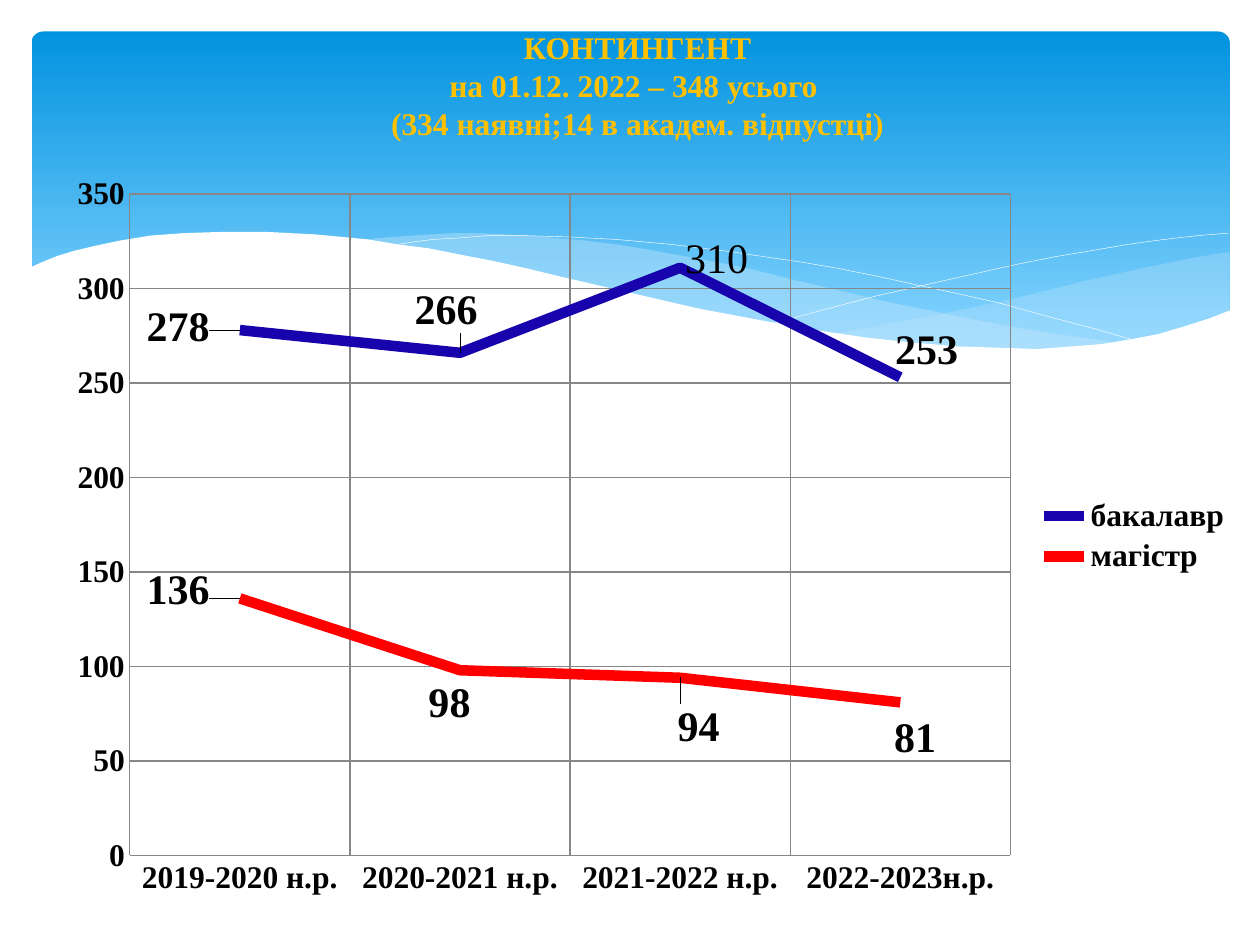
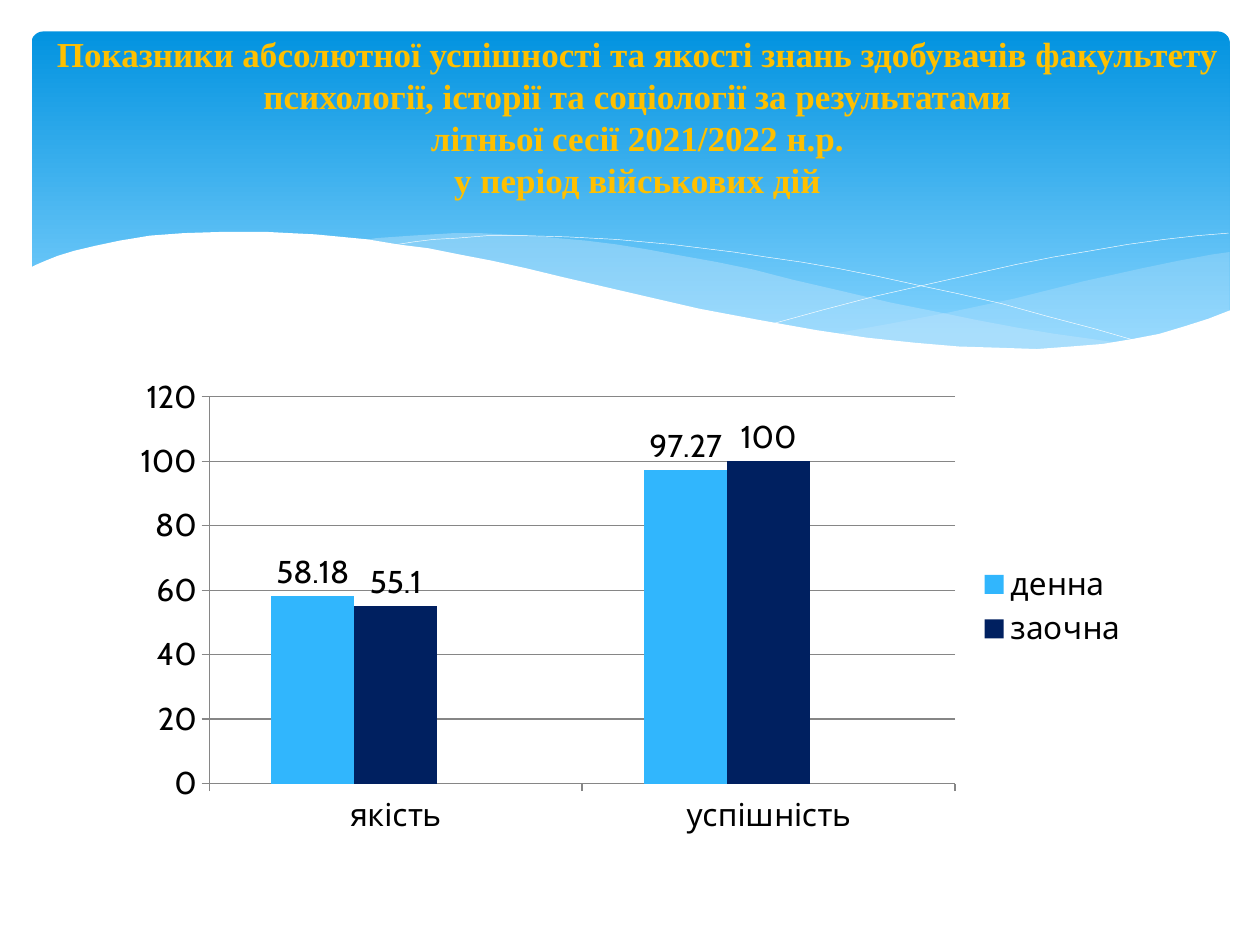
from pptx import Presentation
from pptx.chart.data import CategoryChartData
from pptx.dml.color import RGBColor
from pptx.enum.chart import XL_CHART_TYPE, XL_LABEL_POSITION, XL_LEGEND_POSITION, XL_MARKER_STYLE, XL_TICK_MARK
from pptx.enum.shapes import MSO_SHAPE
from pptx.enum.text import MSO_ANCHOR, MSO_AUTO_SIZE, PP_ALIGN
from pptx.oxml import parse_xml
from pptx.oxml.ns import nsdecls
from pptx.util import Inches, Pt

LINE, COLUMN = XL_CHART_TYPE.LINE, XL_CHART_TYPE.COLUMN_CLUSTERED
LABEL_RIGHT, LABEL_ABOVE = XL_LABEL_POSITION.RIGHT, XL_LABEL_POSITION.OUTSIDE_END
LEGEND_RIGHT = XL_LEGEND_POSITION.RIGHT
NO_MARKER = XL_MARKER_STYLE.NONE
TICK_NONE, TICK_OUT = XL_TICK_MARK.NONE, XL_TICK_MARK.OUTSIDE
ROUNDED = MSO_SHAPE.ROUNDED_RECTANGLE
MIDDLE, CENTER, NO_FIT = MSO_ANCHOR.MIDDLE, PP_ALIGN.CENTER, MSO_AUTO_SIZE.NONE

COLORS = {
    "sky_top": "0293E0", "sky_bottom": "83D3FE", "wave": "C6E7FC", "paper": "FFFFFF",
    "title": "FFC000", "text": "000000", "grid": "868686",
    "bachelor": "1804AC", "master": "FF0000",
    "full_time": "31B6FD", "part_time": "002060", "unused": "5BD078",
}
SERIF, SANS = "Times New Roman", "Cabin"

RIGHT_WAVE = [
    (9.76, 2), (9.62, 2.02), (9.35, 2.07), (9.06, 2.13), (8.61, 2.23), (8.05, 2.37),
    (7.53, 2.48), (7.06, 2.57), (6.61, 2.65), (6.91, 2.69), (7.19, 2.72), (7.45, 2.75),
    (7.69, 2.77), (8.03, 2.78), (8.35, 2.77), (8.63, 2.75), (8.89, 2.72), (9.13, 2.67),
    (9.35, 2.62), (9.49, 2.57), (9.63, 2.52), (9.76, 2.47),
]
LONG_WAVE = [
    (8.93, 2.73), (8.66, 2.69), (8.37, 2.65), (8.07, 2.6), (7.75, 2.54), (7.41, 2.47),
    (7.06, 2.4), (6.68, 2.31), (6.29, 2.22), (5.98, 2.14), (5.69, 2.08), (5.41, 2.03),
    (5.14, 1.98), (4.89, 1.94), (4.65, 1.91), (4.42, 1.89), (4.2, 1.87), (3.99, 1.86),
    (3.8, 1.85), (3.61, 1.85), (3.28, 1.87), (2.99, 1.89), (2.86, 1.91), (3.23, 1.96),
    (3.62, 2.03), (4.04, 2.11), (4.49, 2.22), (4.91, 2.32), (5.3, 2.4), (5.66, 2.48),
    (6.01, 2.55), (6.34, 2.61), (6.65, 2.66), (6.95, 2.7), (7.22, 2.74), (7.48, 2.76),
    (7.73, 2.77), (7.96, 2.78), (8.28, 2.78), (8.57, 2.77), (8.76, 2.75),
]
FALLING_CURVE = [
    (3.09, 1.95), (3.28, 1.92), (3.44, 1.9), (3.63, 1.89), (3.87, 1.87), (4.16, 1.87),
    (4.5, 1.88), (4.89, 1.9), (5.33, 1.94), (5.82, 2), (6.08, 2.04), (6.36, 2.08),
    (6.65, 2.13), (6.95, 2.19), (7.27, 2.26), (7.6, 2.33), (7.95, 2.41), (8.31, 2.51),
    (8.69, 2.61), (9.07, 2.72),
]
RISING_CURVE = [
    (6.13, 2.57), (6.53, 2.46), (6.95, 2.35), (7.48, 2.23), (8.06, 2.1), (8.36, 2.04),
    (8.66, 1.99), (8.95, 1.94), (9.24, 1.9), (9.51, 1.87), (9.75, 1.85),
]
PAPER_EDGE = [
    (9.77, 2.46), (9.59, 2.53), (9.4, 2.59), (9.2, 2.65), (8.99, 2.69), (8.75, 2.73),
    (8.5, 2.75), (8.23, 2.77), (7.93, 2.76), (7.61, 2.75), (7.26, 2.72), (6.88, 2.68),
    (6.48, 2.62), (6.03, 2.54), (5.55, 2.45), (5.03, 2.33), (4.47, 2.2), (4.18, 2.13),
    (3.91, 2.07), (3.65, 2.02), (3.4, 1.97), (3.16, 1.94), (2.92, 1.9), (2.71, 1.88),
    (2.5, 1.86), (2.3, 1.85), (2.11, 1.84), (1.77, 1.84), (1.46, 1.85), (1.19, 1.87),
    (0.95, 1.91), (0.76, 1.95), (0.59, 1.99), (0.46, 2.03), (0.36, 2.07), (0.29, 2.1),
    (0.23, 2.13), (0.23, 3.29), (9.77, 3.29),
]


def rgb(name):
    return RGBColor.from_string(COLORS[name])


def manual_layout(**values):
    modes = '<c:layoutTarget val="inner"/><c:xMode val="edge"/><c:yMode val="edge"/>' if "w" in values else ""
    parts = "".join(f'<c:{key} val="{value:.4f}"/>' for key, value in values.items())
    return parse_xml(f'<c:layout {nsdecls("c")}><c:manualLayout>{modes}{parts}</c:manualLayout></c:layout>')


class Deck:
    def __init__(self):
        self.prs = Presentation()
        self.prs.slide_width, self.prs.slide_height = Inches(10), Inches(7.5)
        self.layout = self.prs.slide_layouts[5]
        self.slide = None

    def add_slide(self):
        self.slide = self.prs.slides.add_slide(self.layout)

    def share(self, decorations):
        tree = self.layout.shapes.element
        for order, shape in enumerate(decorations):
            shape.element.xpath(".//p:cNvPr")[0].set("id", str(100 + order))
            tree.insert(2 + order, shape.element)

    def sky(self):
        band = self.slide.shapes.add_shape(ROUNDED, Inches(0.25), Inches(0.25), Inches(9.51), Inches(2.7))
        band.adjustments[0] = 0.034
        band.shadow.inherit = False
        band.line.fill.background()
        band.fill.gradient()
        band.fill.gradient_angle = 270
        for stop, color, position in zip(band.fill.gradient_stops, ("sky_top", "sky_bottom"), (0, 0.9)):
            stop.color.rgb = rgb(color)
            stop.position = position
        return band

    def outline(self, points, closed):
        corners = [(Inches(x), Inches(y)) for x, y in points]
        builder = self.slide.shapes.build_freeform(*corners[0])
        builder.add_line_segments(corners[1:], close=closed)
        shape = builder.convert_to_shape()
        shape.shadow.inherit = False
        return shape

    def area(self, points, color, opacity=100):
        shape = self.outline(points, True)
        shape.line.fill.background()
        shape.fill.solid()
        shape.fill.fore_color.rgb = rgb(color)
        if opacity < 100:
            tint = shape.element.xpath("p:spPr/a:solidFill/a:srgbClr")[0]
            tint.append(parse_xml(f'<a:alpha {nsdecls("a")} val="{opacity * 1000}"/>'))
        return shape

    def curve(self, points):
        shape = self.outline(points, False)
        shape.fill.background()
        shape.line.color.rgb = rgb("paper")
        shape.line.width = Pt(0.25)
        return shape

    def title(self, lines, box, size):
        title = self.slide.shapes.title
        title.left, title.top, title.width, title.height = map(Inches, box)
        frame = title.text_frame
        frame.text = "\v".join(lines)
        frame.auto_size, frame.vertical_anchor, frame.word_wrap = NO_FIT, MIDDLE, True
        paragraph = frame.paragraphs[0]
        paragraph.alignment = CENTER
        for run in paragraph.runs:
            self.style(run.font, size, SERIF, True, "title")

    def style(self, font, size, family, bold=False, color="text"):
        font.size, font.name, font.bold = Pt(size), family, bold
        font.color.rgb = rgb(color)

    def chart(self, kind, categories, series, box, plot_box, top, step, family, bold, tick):
        data = CategoryChartData()
        data.categories = categories
        for name, values, _ in series:
            data.add_series(name, values)
        chart = self.slide.shapes.add_chart(kind, *map(Inches, box), data).chart
        self.style(chart.font, 18, family, bold)
        chart.has_title = False
        chart.has_legend = True
        chart.legend.position = LEGEND_RIGHT
        chart.legend.include_in_layout = False
        self.style(chart.legend.font, 18, family, bold)
        for axis in (chart.category_axis, chart.value_axis):
            axis.major_tick_mark, axis.minor_tick_mark = tick, TICK_NONE
            axis.format.line.color.rgb = rgb("grid")
            self.style(axis.tick_labels.font, 18, family, bold)
        chart.value_axis.minimum_scale, chart.value_axis.maximum_scale = 0, top
        chart.value_axis.major_unit = step
        self.gridlines(chart.value_axis)
        area = chart.element.xpath(".//c:plotArea")[0]
        for layout in area.xpath("c:layout"):
            area.remove(layout)
        left, upper, width, height = plot_box
        area.insert(0, manual_layout(x=(left - box[0]) / box[2], y=(upper - box[1]) / box[3],
                                     w=width / box[2], h=height / box[3]))
        return chart

    def gridlines(self, axis):
        axis.has_major_gridlines = True
        axis.major_gridlines.format.line.color.rgb = rgb("grid")

    def line_chart(self, categories, series, offsets, custom_labels, box, **options):
        chart = self.chart(LINE, categories, series, box, family=SERIF, bold=True, tick=TICK_NONE, **options)
        self.gridlines(chart.category_axis)
        for index, (plotted, (name, _, color)) in enumerate(zip(chart.plots[0].series, series)):
            plotted.smooth = False
            plotted.marker.style = NO_MARKER
            plotted.format.line.color.rgb = rgb(color)
            plotted.format.line.width = Pt(6)
            for position, (dx, dy) in enumerate(offsets[index]):
                label = plotted.points[position].data_label
                if (name, position) in custom_labels:
                    label.text_frame.text = custom_labels[name, position]
                    self.style(label.text_frame.paragraphs[0].runs[0].font, 24, SERIF)
                else:
                    self.style(label.font, 24, SERIF, True)
                label.position = LABEL_RIGHT
                node = chart.element.xpath(f".//c:ser[{index + 1}]//c:dLbl[c:idx/@val='{position}']")[0]
                node[0].addnext(manual_layout(x=dx / box[2], y=dy / box[3]))

    def column_chart(self, categories, series, hidden, box, **options):
        chart = self.chart(COLUMN, categories, series, box, family=SANS, bold=False, tick=TICK_OUT, **options)
        plot = chart.plots[0]
        plot.gap_width, plot.overlap = 150, 0
        plot.vary_by_categories = False
        for index, (plotted, (_, _, color)) in enumerate(zip(plot.series, series)):
            plotted.format.fill.solid()
            plotted.format.fill.fore_color.rgb = rgb(color)
            if index == hidden:
                continue
            labels = plotted.data_labels
            labels.show_value = True
            labels.position = LABEL_ABOVE
            self.style(labels.font, 18, SANS)
        entry = f'<c:legendEntry {nsdecls("c")}><c:idx val="{hidden}"/><c:delete val="1"/></c:legendEntry>'
        chart.element.xpath(".//c:legendPos")[0].addnext(parse_xml(entry))


def main():
    deck = Deck()
    deck.add_slide()
    deck.share([
        deck.sky(),
        deck.area(RIGHT_WAVE, "wave", 29),
        deck.area(LONG_WAVE, "wave", 40),
        deck.curve(FALLING_CURVE),
        deck.curve(RISING_CURVE),
        deck.area(PAPER_EDGE, "paper"),
    ])
    deck.title(["КОНТИНГЕНТ", "на 01.12. 2022 – 348 усього ", "(334 наявні;14 в академ. відпустці)"],
               (1.06, 0.21, 8, 0.93), 18)
    deck.line_chart(
        ["2019-2020 н.р.", "2020-2021 н.р.", "2021-2022 н.р.", "2022-2023н.р."],
        [("бакалавр", (278, 266, 311, 253), "bachelor"), ("магістр", (136, 98, 94, 81), "master")],
        [[(-0.78, -0.02), (-0.4, -0.34), (0, -0.07), (-0.08, -0.22)],
         [(-0.78, -0.07), (-0.29, 0.26), (-0.06, 0.39), (-0.09, 0.28)]],
        {("бакалавр", 2): "310"},
        (0.43, 1.29, 9.45, 5.93), plot_box=(1.03, 1.54, 6.99, 5.25), top=350, step=50)

    deck.add_slide()
    deck.title(["Показники абсолютної успішності та якості знань здобувачів факультету "
                "психології, історії та соціології за результатами",
                "літньої сесії 2021/2022 н.р.", "у період військових дій"],
               (0.12, 0.3, 9.88, 1.25), 20)
    deck.column_chart(
        ["якість", "успішність"],
        [("денна", (58.18, 97.27), "full_time"), ("заочна", (55.1, 100), "part_time"),
         ("Series 3", (None, None), "unused")],
        2, (0.95, 2.93, 8.1, 3.77), plot_box=(1.66, 3.15, 5.92, 3.07), top=120, step=20)
    deck.prs.save("out.pptx")


if __name__ == "__main__":
    main()
